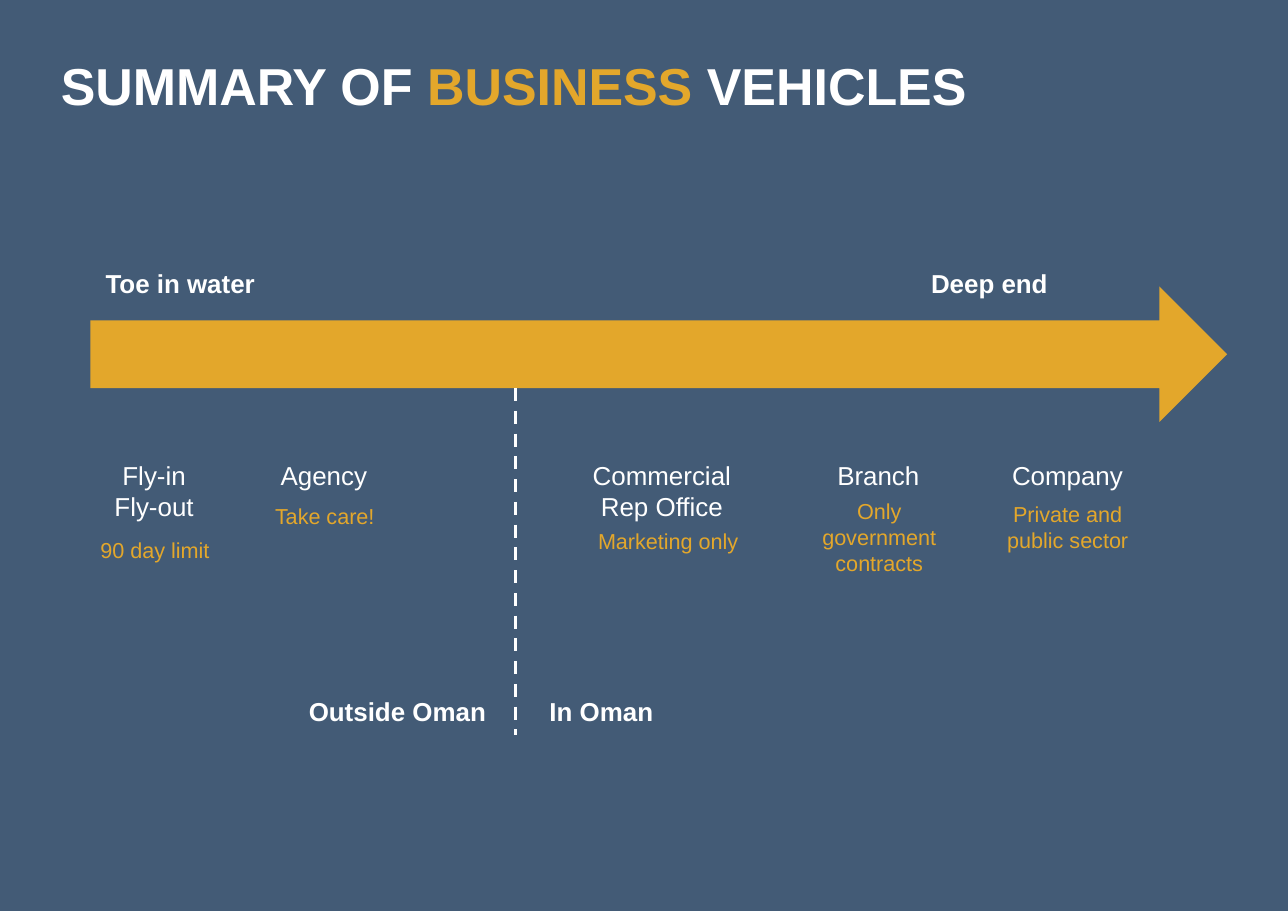
from pptx import Presentation
from pptx.dml.color import RGBColor
from pptx.enum import dml, shapes, text
from pptx.oxml.ns import qn
from pptx.util import Inches, Pt

WHITE = RGBColor(0xFF, 0xFF, 0xFF)
GOLD = RGBColor(0xE3, 0xA7, 0x2B)
NAVY = RGBColor(0x43, 0x5B, 0x76)
FONT = "Arial"
LEFT, MID, RIGHT = text.PP_ALIGN.LEFT, text.PP_ALIGN.CENTER, text.PP_ALIGN.RIGHT

# Content: boxes are (left, top, width, height) in inches
TITLE = [("SUMMARY OF ", WHITE), ("BUSINESS ", GOLD), ("VEHICLES", WHITE)]
ARROW = (0.58, 1.84, 7.3, 0.87)
SPLIT_X, SPLIT_END = 3.31, 4.72
ENDS_Y, SIDES_Y, NAMES_Y = 1.67, 4.42, 2.9
LABEL_W, LINE_H = 1.73, 0.3

LABELS = [  # words, left, top, alignment
    ("Toe in water", 0.58, ENDS_Y, LEFT),
    ("Deep end", 5.88, ENDS_Y, LEFT),
    ("Outside Oman", 1.49, SIDES_Y, RIGHT),
    ("In Oman", 3.43, SIDES_Y, LEFT),
]
VEHICLES = [  # name lines, left, width, height
    (["Fly-in", "Fly-out"], 0.54, 0.9, 0.5),
    (["Agency"], 1.63, 0.9, LINE_H),
    (["Commercial Rep Office"], 3.59, 1.32, 0.5),
    (["Branch"], 5.19, 0.9, LINE_H),
    (["Company"], 6.32, 1.07, LINE_H),
]
NOTES = [  # remark, box
    ("90 day limit", (0.47, 3.4, 1.05, 0.27)),
    ("Take care!", (1.56, 3.18, 1.05, 0.27)),
    ("Marketing only", (3.71, 3.34, 1.16, 0.27)),
    ("Only government contracts", (5.12, 3.15, 1.05, 0.61)),
    ("Private and public sector", (6.33, 3.17, 1.05, 0.44)),
]

deck = Presentation()
deck.slide_width, deck.slide_height = Inches(8.27), Inches(5.85)
slide = deck.slides.add_slide(deck.slide_layouts[6])
slide.background.fill.solid()
slide.background.fill.fore_color.rgb = NAVY


def add_text(box, paras, size, bold=False, align=LEFT):
    """Each paragraph is a list of (words, colour) runs."""
    frame = slide.shapes.add_textbox(*map(Inches, box)).text_frame
    frame.word_wrap = True
    for i, runs in enumerate(paras):
        para = frame.add_paragraph() if i else frame.paragraphs[0]
        para.alignment = align
        for words, color in runs:
            run = para.add_run()
            run.text = words
            run.font.name, run.font.size, run.font.bold = FONT, Pt(size), bold
            run.font.color.rgb = color
    return frame


# Title
head = add_text((0.39, 0.39, 7.48, 0.76), [TITLE], 24, True)
head.margin_left = head.margin_right = head.margin_top = head.margin_bottom = 0
head.paragraphs[0].line_spacing = 0.9

# Arrow
arrow = slide.shapes.add_shape(shapes.MSO_SHAPE.RIGHT_ARROW, *map(Inches, ARROW))
arrow.shadow.inherit = False
arrow.fill.solid()
arrow.fill.fore_color.rgb = GOLD
arrow.line.fill.background()

# Border line, from the lower edge of the arrow's shaft
shaft_y = ARROW[1] + ARROW[3] * 0.75
split = slide.shapes.add_connector(
    shapes.MSO_CONNECTOR.STRAIGHT,
    *map(Inches, (SPLIT_X, shaft_y, SPLIT_X, SPLIT_END)))
split.line.color.rgb = WHITE
split.line.width = Pt(1.5)
split.line.dash_style = dml.MSO_LINE.DASH
props = split.line._get_or_add_ln().getparent()
props.append(props.makeelement(qn("a:effectLst"), {}))

# Labels, vehicle names and remarks
for words, left, top, align in LABELS:
    add_text((left, top, LABEL_W, LINE_H), [[(words, WHITE)]], 12, True, align)
for lines, left, width, height in VEHICLES:
    paras = [[(line, WHITE)] for line in lines]
    add_text((left, NAMES_Y, width, height), paras, 12, align=MID)
for words, box in NOTES:
    add_text(box, [[(words, GOLD)]], 10, align=MID)

deck.save("out.pptx")
